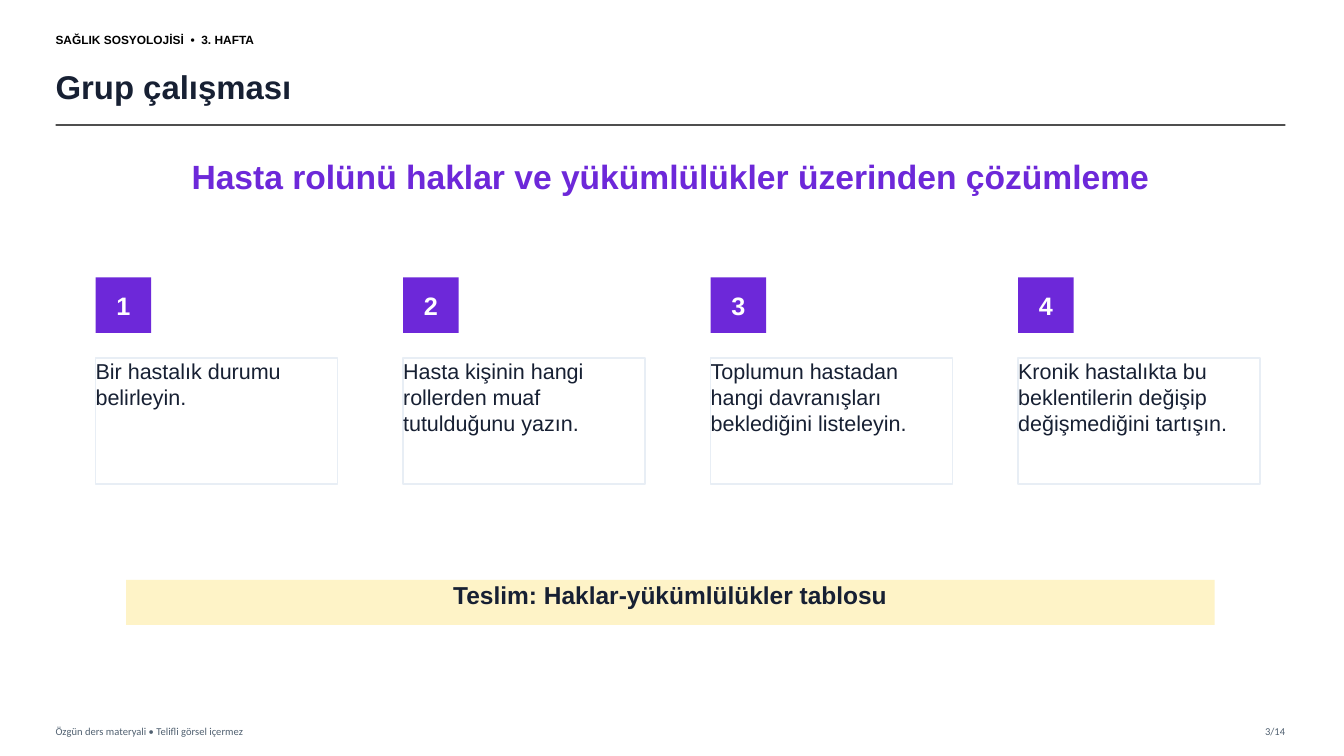
import pptx
import pptx.dml.color
import pptx.enum.shapes
import pptx.enum.text
import pptx.oxml.ns
import pptx.util
from lxml import etree

Cm = pptx.util.Cm
Align = pptx.enum.text.PP_ALIGN
Anchor = pptx.enum.text.MSO_ANCHOR

COLORS = {
    "ink": "172033",
    "black": "000000",
    "white": "FFFFFF",
    "rule": "333333",
    "muted": "506070",
    "accent": "6D28D9",
    "border": "E8EEF5",
    "highlight": "FEF3C7",
}

STEPS = [
    "Bir hastalık durumu belirleyin.",
    "Hasta kişinin hangi rollerden muaf tutulduğunu yazın.",
    "Toplumun hastadan hangi davranışları beklediğini listeleyin.",
    "Kronik hastalıkta bu beklentilerin değişip değişmediğini tartışın.",
]
MARGIN = 1.4
RIGHT_EDGE = 32.39
FOOTER_TOP = 18.14
STEP_LEFT = 2.41
STEP_PITCH = 7.75


def color(name):
    return pptx.dml.color.RGBColor.from_string(COLORS[name])


def write(box, text, size, fill="ink", bold=False, font="Arial",
          align=Align.LEFT, anchor=Anchor.TOP):
    frame = box.text_frame
    frame.word_wrap = True
    frame.auto_size = pptx.enum.text.MSO_AUTO_SIZE.NONE
    frame.vertical_anchor = anchor
    frame.margin_left = frame.margin_right = 0
    frame.margin_top = frame.margin_bottom = 0
    para = frame.paragraphs[0]
    para.alignment = align
    span = para.add_run()
    span.text = text
    span.font.name = font
    span.font.size = pptx.util.Pt(size)
    span.font.bold = bold
    span.font.color.rgb = color(fill)


def add_title(page, text, left, top, width, height):
    title = page.shapes.title
    title.left, title.top = Cm(left), Cm(top)
    title.width, title.height = Cm(width), Cm(height)
    write(title, text, 23.5, bold=True, anchor=Anchor.MIDDLE)


def add_label(page, text, left, top, width, height, **style):
    box = page.shapes.add_textbox(Cm(left), Cm(top), Cm(width), Cm(height))
    write(box, text, **style)


def add_panel(page, text, left, top, width, height, back, border=None, **style):
    panel = page.shapes.add_shape(
        pptx.enum.shapes.MSO_SHAPE.RECTANGLE,
        Cm(left), Cm(top), Cm(width), Cm(height))
    panel.shadow.inherit = False
    panel.fill.solid()
    panel.fill.fore_color.rgb = color(back)
    if border:
        panel.line.color.rgb = color(border)
        panel.line.width = pptx.util.Pt(1)
    else:
        panel.line.fill.background()
    write(panel, text, **style)


def add_rule(page, left, right, top):
    rule = page.shapes.add_connector(
        pptx.enum.shapes.MSO_CONNECTOR.STRAIGHT,
        Cm(left), Cm(top), Cm(right), Cm(top))
    rule.line.color.rgb = color("rule")
    rule.line.width = pptx.util.Pt(1.2)
    qn = pptx.oxml.ns.qn
    properties = rule.element.spPr
    shade = next(properties.iter(qn("a:srgbClr")))
    etree.SubElement(shade, qn("a:alpha")).set("val", "85000")
    etree.SubElement(properties, qn("a:effectLst"))


def add_step(page, index, text):
    left = STEP_LEFT + index * STEP_PITCH
    add_panel(page, str(index + 1), left, 6.99, 1.4, 1.4, "accent", size=18,
              fill="white", bold=True, align=Align.CENTER, anchor=Anchor.MIDDLE)
    add_panel(page, text, left, 9.02, 6.1, 3.18, "white", border="border",
              size=15.4)


def main():
    deck = pptx.Presentation()
    deck.slide_width, deck.slide_height = Cm(33.87), Cm(19.05)
    page = deck.slides.add_slide(deck.slide_layouts.get_by_name("Title Only"))
    page.background.fill.solid()
    page.background.fill.fore_color.rgb = color("white")

    add_label(page, "SAĞLIK SOSYOLOJİSİ  •  3. HAFTA", MARGIN, 0.64, 9.14, 0.71,
              size=8.5, fill="black", bold=True, anchor=Anchor.MIDDLE)
    add_title(page, "Grup çalışması", MARGIN, 1.47, 30.35, 1.4)
    add_rule(page, MARGIN, RIGHT_EDGE, 3.15)

    footer = dict(size=7.5, fill="muted", font="Calibri", anchor=Anchor.MIDDLE)
    add_label(page, "Özgün ders materyali • Telifli görsel içermez",
              MARGIN, FOOTER_TOP, 15.24, 0.56, **footer)
    add_label(page, "3/14", RIGHT_EDGE - 1.65, FOOTER_TOP, 1.65, 0.56,
              align=Align.RIGHT, **footer)

    add_label(page, "Hasta rolünü haklar ve yükümlülükler üzerinden çözümleme",
              1.91, 3.94, 29.97, 1.65, size=24, fill="accent", bold=True,
              align=Align.CENTER)
    for index, text in enumerate(STEPS):
        add_step(page, index, text)
    add_panel(page, "Teslim: Haklar-yükümlülükler tablosu", 3.18, 14.61, 27.43,
              1.14, "highlight", size=17.5, bold=True, align=Align.CENTER)
    deck.save("out.pptx")


if __name__ == "__main__":
    main()
